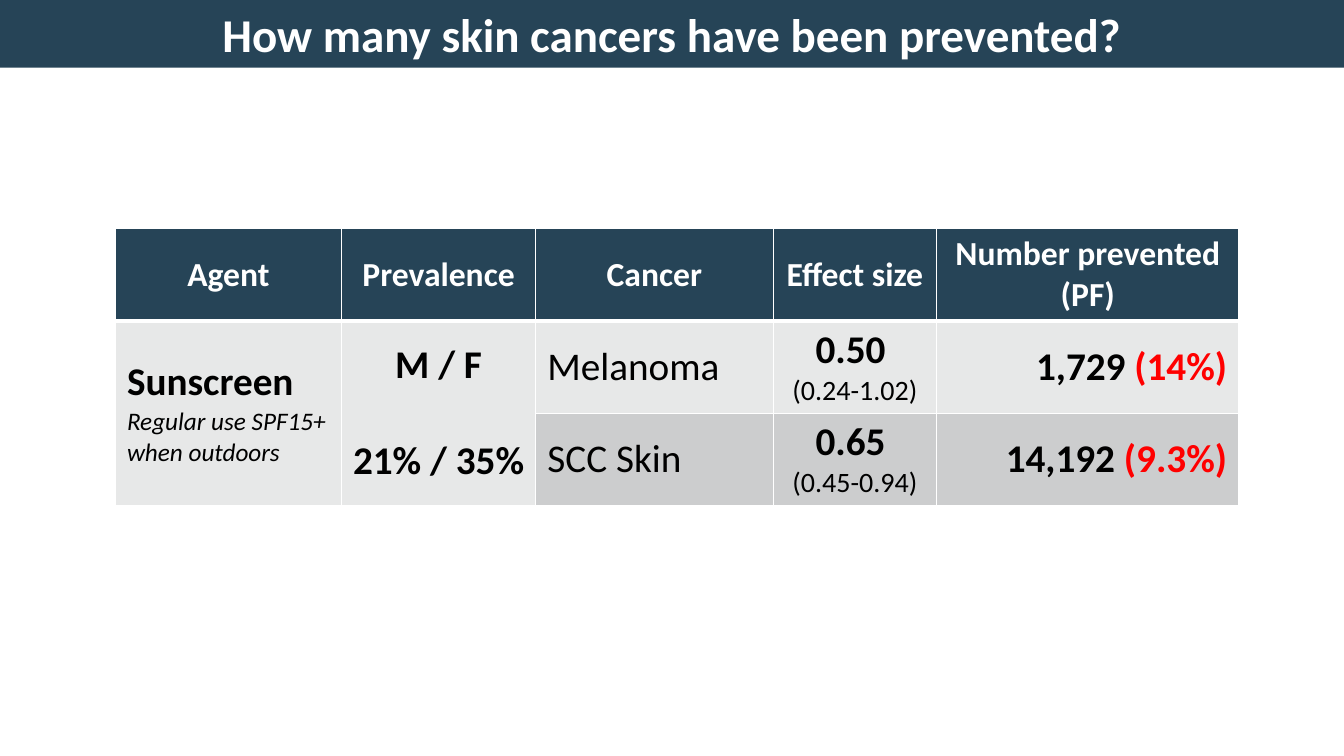
from dataclasses import dataclass, field

from lxml import etree
from pptx import Presentation
from pptx import util as u
from pptx.dml.color import RGBColor
from pptx.enum import text
from pptx.oxml import ns

NAVY, WHITE, BLACK, RED = "264457", "FFFFFF", "000000", "FF0000"
LIGHT, GREY = "E7E8E8", "CCCDCE"
LEFT, CENTER, RIGHT = text.PP_ALIGN.LEFT, text.PP_ALIGN.CENTER, text.PP_ALIGN.RIGHT
COLUMN_WIDTHS = [2.25, 1.92, 2.36, 1.62, 3]
ROW_HEIGHT = 0.9


@dataclass
class Run:
    words: str
    size: float = 28
    bold: bool = True
    italic: bool = False
    color: str = BLACK


@dataclass
class Entry:
    """Content of one table cell: each line is a list of runs."""
    lines: list[list[Run]] = field(default_factory=list)
    align: text.PP_ALIGN = LEFT
    side: float = 0.12
    gap: float = 0


def rgb(value: str) -> RGBColor:
    return RGBColor.from_string(value)


def paint(target, color: str) -> None:
    target.fill.solid()
    target.fill.fore_color.rgb = rgb(color)


def write(frame, entry: Entry) -> None:
    for index, line in enumerate(entry.lines):
        paragraph = frame.add_paragraph() if index else frame.paragraphs[0]
        paragraph.alignment = entry.align
        if index and entry.gap:
            paragraph.space_before = u.Pt(entry.gap)
        for part in line:
            run = paragraph.add_run()
            run.text = part.words
            looks = {"name": "Calibri", "size": u.Pt(part.size),
                     "bold": part.bold, "italic": part.italic}
            for key, value in looks.items():
                setattr(run.font, key, value)
            run.font.color.rgb = rgb(part.color)


def add_borders(cell, bottom: float, top: float) -> None:
    properties = cell._tc.get_or_add_tcPr()
    for edge, width in {"L": 1, "R": 1, "T": top, "B": bottom}.items():
        line = etree.SubElement(properties, ns.qn(f"a:ln{edge}"), w=str(u.Pt(width)))
        solid = etree.SubElement(line, ns.qn("a:solidFill"))
        etree.SubElement(solid, ns.qn("a:srgbClr"), val=WHITE)


def heading(words: str, side: float = 0.12) -> Entry:
    return Entry([[Run(words, 24, color=WHITE)]], CENTER, side)


def cancer_row(cancer: str, effect: str, interval: str,
               prevented: str, fraction: str) -> list[Entry]:
    return [
        Entry([[Run(cancer, bold=False)]]),
        Entry([[Run(effect + " ")], [Run(interval, 20, False)]], CENTER),
        Entry([[Run(prevented + " "), Run(fraction, color=RED)]], RIGHT),
    ]


def add_title(slide) -> None:
    title = slide.shapes.title
    place = {"left": 0, "top": 0, "width": 13.33, "height": 0.67}
    for key, value in place.items():
        setattr(title, key, u.Inches(value))
    paint(title, NAVY)
    frame = title.text_frame
    layout = {"auto_size": text.MSO_AUTO_SIZE.NONE, "word_wrap": True,
              "vertical_anchor": text.MSO_ANCHOR.MIDDLE}
    for key, value in layout.items():
        setattr(frame, key, value)
    question = Run("How many skin cancers have been prevented?", 33.6, color=WHITE)
    write(frame, Entry([[question]], CENTER))


def add_prevention_table(slide) -> None:
    # Cell contents
    sunscreen = Entry([[Run("Sunscreen")],
                       [Run("Regular use SPF15+ when outdoors", 18, False, True)]])
    prevalence = Entry([[Run("M / F")], [Run("21% / 35%")]], CENTER, 0.06, 34)
    rows = [
        [heading("Agent"), heading("Prevalence", 0.06), heading("Cancer"),
         heading("Effect size"), heading("Number prevented (PF)")],
        [sunscreen, prevalence,
         *cancer_row("Melanoma", "0.50", "(0.24-1.02)", "1,729", "(14%)")],
        [Entry(), Entry(),
         *cancer_row("SCC Skin", "0.65", "(0.45-0.94)", "14,192", "(9.3%)")],
    ]

    # Grid
    table = slide.shapes.add_table(
        len(rows), len(COLUMN_WIDTHS), u.Inches(1.14), u.Inches(2.27),
        u.Inches(sum(COLUMN_WIDTHS)), u.Inches(ROW_HEIGHT * len(rows))).table
    for column, width in zip(table.columns, COLUMN_WIDTHS):
        column.width = u.Inches(width)
    for column in (0, 1):
        table.cell(1, column).merge(table.cell(2, column))

    # Cells
    for r, (entries, fill) in enumerate(zip(rows, (NAVY, LIGHT, GREY))):
        for c, entry in enumerate(entries):
            cell = table.cell(r, c)
            add_borders(cell, bottom=3 if r == 0 else 1, top=3 if r == 1 else 1)
            paint(cell, LIGHT if cell.is_spanned else fill)
            layout = {"vertical_anchor": text.MSO_ANCHOR.MIDDLE,
                      "margin_left": u.Inches(entry.side),
                      "margin_right": u.Inches(entry.side),
                      "margin_top": u.Inches(0.05),
                      "margin_bottom": u.Inches(0.05)}
            for key, value in layout.items():
                setattr(cell, key, value)
            write(cell.text_frame, entry)


def main() -> None:
    deck = Presentation()
    deck.slide_width, deck.slide_height = u.Inches(13.33), u.Inches(7.5)
    slide = deck.slides.add_slide(deck.slide_layouts[5])
    add_prevention_table(slide)
    add_title(slide)
    deck.save("out.pptx")


if __name__ == "__main__":
    main()
